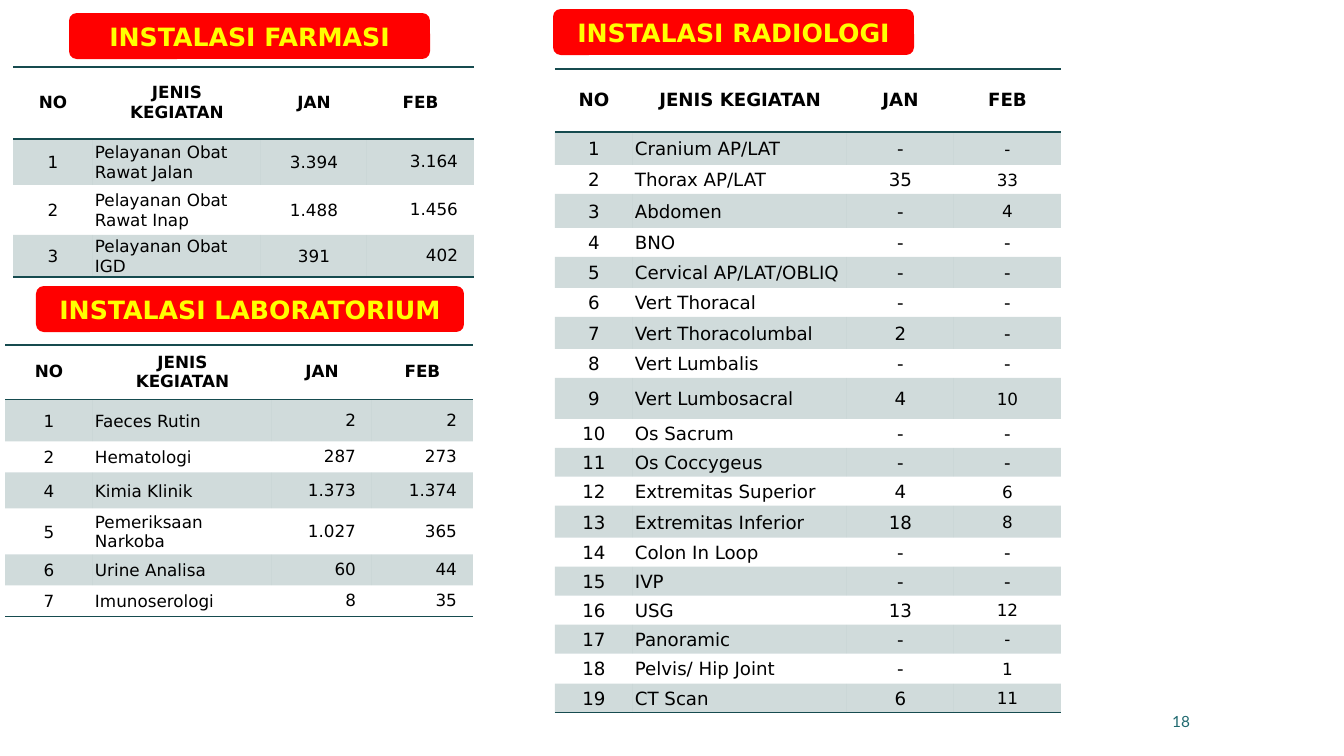
from lxml import etree
from pptx import Presentation
from pptx.dml.color import RGBColor
from pptx.enum.shapes import MSO_SHAPE
from pptx.enum.text import MSO_ANCHOR, PP_ALIGN
from pptx.oxml.ns import qn
from pptx.util import Pt

ROUNDED = MSO_SHAPE.ROUNDED_RECTANGLE
MIDDLE = MSO_ANCHOR.MIDDLE
LEFT, CENTER, RIGHT = PP_ALIGN.LEFT, PP_ALIGN.CENTER, PP_ALIGN.RIGHT
EMU_PER_PX = 914400 / 100.8
FONT = "DejaVu Sans"
TEAL = "164B4F"
NO_STYLE = "{2D5ABB26-0587-4C30-8999-92F81FD0307C}"
HEADINGS = ("NO", "JENIS KEGIATAN", "JAN", "FEB")
FIGURE_MARGIN = 16
SMALL_FEB_ROWS = (1, 2, 3, 9, 12, 13, 16, 17, 18, 19)

BANNERS = (
    ("INSTALASI FARMASI", (69, 13, 361, 46)),
    ("INSTALASI LABORATORIUM", (36, 286, 428, 46)),
    ("INSTALASI RADIOLOGI", (553, 9, 361, 46)),
)
PHARMACY = (
    ("1", "Pelayanan Obat Rawat Jalan", "3.394", "3.164"),
    ("2", "Pelayanan Obat Rawat Inap", "1.488", "1.456"),
    ("3", "Pelayanan Obat IGD", "391", "402"),
)
LABORATORY = (
    ("1", "Faeces Rutin", "2", "2"),
    ("2", "Hematologi", "287", "273"),
    ("4", "Kimia Klinik", "1.373", "1.374"),
    ("5", "Pemeriksaan Narkoba", "1.027", "365"),
    ("6", "Urine Analisa", "60", "44"),
    ("7", "Imunoserologi", "8", "35"),
)
RADIOLOGY = (
    ("1", "Cranium AP/LAT", "-", "-"),
    ("2", "Thorax AP/LAT", "35", "33"),
    ("3", "Abdomen", "-", "4"),
    ("4", "BNO", "-", "-"),
    ("5", "Cervical AP/LAT/OBLIQ", "-", "-"),
    ("6", "Vert Thoracal", "-", "-"),
    ("7", "Vert Thoracolumbal", "2", "-"),
    ("8", "Vert Lumbalis", "-", "-"),
    ("9", "Vert Lumbosacral", "4", "10"),
    ("10", "Os Sacrum", "-", "-"),
    ("11", "Os Coccygeus", "-", "-"),
    ("12", "Extremitas Superior", "4", "6"),
    ("13", "Extremitas Inferior", "18", "8"),
    ("14", "Colon In Loop", "-", "-"),
    ("15", "IVP", "-", "-"),
    ("16", "USG", "13", "12"),
    ("17", "Panoramic", "-", "-"),
    ("18", "Pelvis/ Hip Joint", "-", "1"),
    ("19", "CT Scan", "6", "11"),
)


def px(length):
    """Turn pixels into EMU."""
    return round(length * EMU_PER_PX)


def color(value):
    """Turn a hex string into a colour."""
    return RGBColor.from_string(value)


def write(frame, text, align, hue, **font_values):
    """Put one formatted paragraph into a text frame."""
    para = frame.paragraphs[0]
    para.alignment = align
    span = para.add_run()
    span.text = text
    for name, value in font_values.items():
        setattr(span.font, name, value)
    span.font.color.rgb = color(hue)


def add_banner(page, text, area):
    """Add a red rounded title banner."""
    box = page.shapes.add_shape(ROUNDED, *map(px, area))
    box.shadow.inherit = False
    box.fill.solid()
    box.fill.fore_color.rgb = color("FF0000")
    box.line.fill.background()
    box.text_frame.vertical_anchor = MIDDLE
    box.text_frame.word_wrap = True
    write(box.text_frame, text, CENTER, "FFFF00", name=FONT, size=Pt(18), bold=True)


def add_page_number(page, text, area):
    """Add the page number at the lower right."""
    box = page.shapes.add_textbox(*map(px, area))
    box.text_frame.word_wrap = True
    box.text_frame.vertical_anchor = MIDDLE
    write(box.text_frame, text, RIGHT, "1F696F", name="Lato", size=Pt(11))


def add_border(cell, side):
    """Draw a teal rule of one point on one side of a cell."""
    properties = cell._tc.get_or_add_tcPr()
    line = etree.SubElement(properties, qn(f"a:{side}"), w=str(Pt(1)))
    fill = etree.SubElement(line, qn("a:solidFill"))
    etree.SubElement(fill, qn("a:srgbClr"), val=TEAL)


def tint(cell):
    """Fill a cell with teal at one fifth opacity."""
    cell.fill.solid()
    cell.fill.fore_color.rgb = color(TEAL)
    shade = next(cell._tc.tcPr.iter(qn("a:srgbClr"), qn("a:solidFill")))
    for hue in cell._tc.tcPr.find(qn("a:solidFill")).iter(qn("a:srgbClr")):
        shade = hue
    etree.SubElement(shade, qn("a:alpha"), val="20000")


def set_margins(cell, left, top, right, bottom):
    """Set the four inner margins of a cell in pixels."""
    margins = {"left": left, "top": top, "right": right, "bottom": bottom}
    for side, value in margins.items():
        setattr(cell, f"margin_{side}", px(value))


def add_activity_table(page, corner, widths, heights, records, size=12,
                       right_columns=(), small_feb_rows=()):
    """Add a striped activity table with ruled headings."""
    area = (*corner, sum(widths), sum(heights))
    frame = page.shapes.add_table(len(heights), len(widths), *map(px, area))
    table = frame.table
    table.first_row = table.horz_banding = False
    table._tbl.tblPr.find(qn("a:tableStyleId")).text = NO_STYLE
    for column, width in zip(table.columns, widths):
        column.width = px(width)
    for row, height in zip(table.rows, heights):
        row.height = px(height)
    for row, record in enumerate((HEADINGS, *records)):
        heading = row == 0
        for column, text in enumerate(record):
            cell = table.cell(row, column)
            cell.vertical_anchor = MIDDLE
            align = LEFT if column == 1 and not heading else CENTER
            if heading:
                set_margins(cell, 20, 7, 20, 7)
                add_border(cell, "lnT")
            elif column in right_columns:
                align = RIGHT
                set_margins(cell, 0, 0, FIGURE_MARGIN, 0)
            else:
                set_margins(cell, 2, 2, 2, 0)
            if heading or row == len(records):
                add_border(cell, "lnB")
            if row % 2:
                tint(cell)
            else:
                cell.fill.background()
            small = column == 3 and row in small_feb_rows
            write(cell.text_frame, text, align, "000000", name=FONT,
                  size=Pt(12 if small else size), bold=heading)


def main():
    """Build the activity slide and save it."""
    deck = Presentation()
    deck.slide_width, deck.slide_height = px(1344), px(756)
    page = deck.slides.add_slide(deck.slide_layouts[6])
    add_activity_table(page, (13, 67), (80, 168, 106, 107), (72, 46, 50, 42),
                       PHARMACY, right_columns=(3,))
    add_page_number(page, "18", (887, 701, 313, 40))
    add_activity_table(page, (5, 345), (88, 179, 100, 101),
                       (54, 42, 31, 36, 46, 31, 31), LABORATORY, right_columns=(2, 3))
    add_activity_table(page, (555, 69), (78, 214, 107, 107),
                       (63, 33, 29, 34, 29, 31, 29, 32, 29, 41,
                        29, 29, 29, 32, 29, 29, 29, 29, 30, 29),
                       RADIOLOGY, size=13, small_feb_rows=SMALL_FEB_ROWS)
    for text, area in BANNERS:
        add_banner(page, text, area)
    deck.save("out.pptx")


if __name__ == "__main__":
    main()
